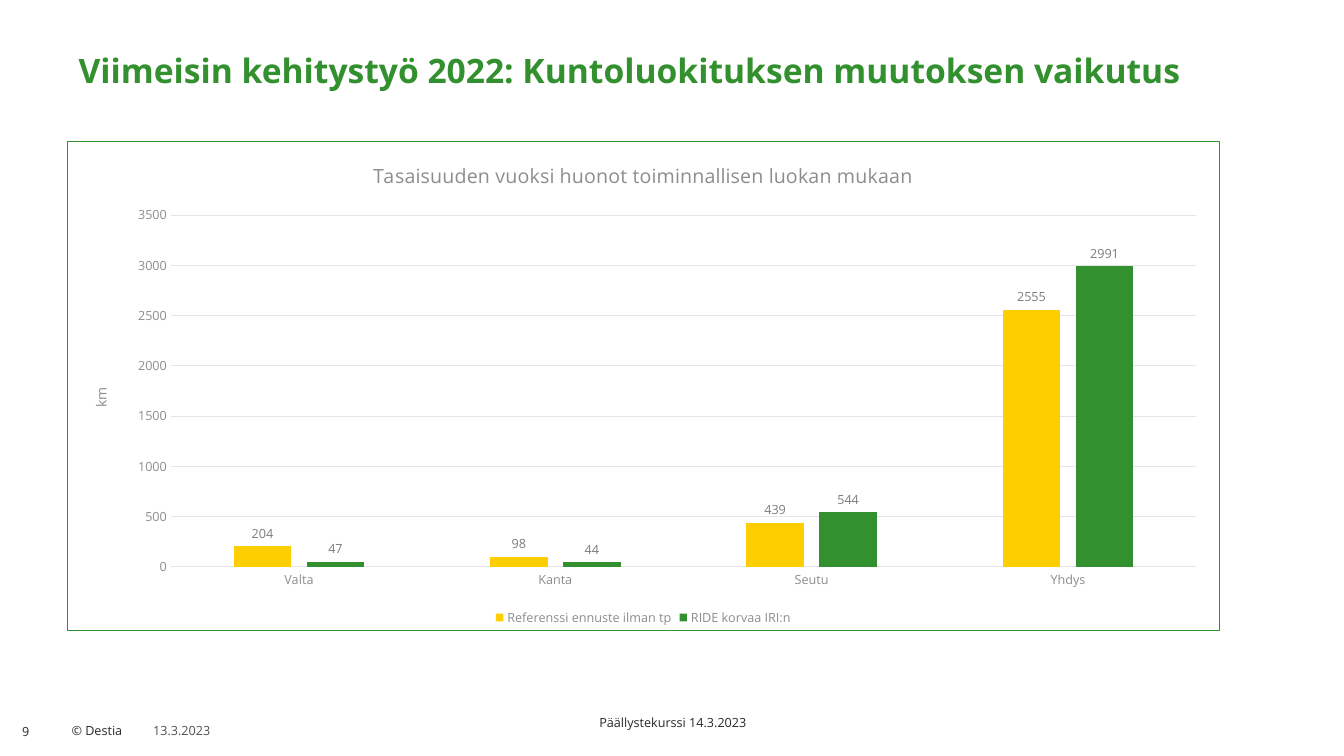
import pptx
import pptx.chart.data
import pptx.dml.color
import pptx.enum.chart
import pptx.enum.text
import pptx.oxml
import pptx.oxml.ns
import pptx.util
from pptx.util import Cm

ALIGN = pptx.enum.text.PP_ALIGN
ANCHOR = pptx.enum.text.MSO_ANCHOR

THEME = {
    "font": "Open Sans",
    "green": "32912E", "yellow": "FFCE00", "ink": "282828", "date": "505050",
    "axis": "8D8D8D", "label": "7C7C7C", "grid": "E5E5E5",
    "title_pt": 24, "chart_title_pt": 14, "axis_title_pt": 10, "small_pt": 9,
}

# text, (left, top, width, height) in cm, size, colour, bold, alignment, anchor,
# (horizontal, vertical) inset in cm
TEXTS = [
    ("© Destia", (1.27, 18.19, 2.06, 0.41), "small_pt", "ink", False,
     ALIGN.RIGHT, ANCHOR.MIDDLE, (0.25, 0.13)),
    ("9", (0.56, 18.06, 1.4, 0.56), "small_pt", "ink", False,
     ALIGN.LEFT, ANCHOR.BOTTOM, (0, 0)),
    ("Viimeisin kehitystyö 2022: Kuntoluokituksen muutoksen vaikutus",
     (1.68, 1.32, 30.53, 1.7), "title_pt", "green", True,
     ALIGN.LEFT, ANCHOR.TOP, (0.3, 0.13)),
    ("13.3.2023", (3.61, 18.21, 7.62, 0.41), "small_pt", "date", False,
     ALIGN.LEFT, ANCHOR.MIDDLE, (0.25, 0.13)),
    ("Päällystekurssi 14.3.2023", (12.8, 18, 8.31, 0.41), "small_pt", "ink", False,
     ALIGN.CENTER, ANCHOR.MIDDLE, (0.25, 0.13)),
]

CHART_BOX = (1.68, 3.56, 29.06, 12.34)
CHART_TITLE = "Tasaisuuden vuoksi huonot toiminnallisen luokan mukaan"
AXIS_TITLE = "km"
CATEGORIES = ["Valta", "Kanta", "Seutu", "Yhdys"]
SERIES = [
    ("Referenssi ennuste ilman tp", "yellow", [204, 98, 439, 2555]),
    ("RIDE korvaa IRI:n", "green", [47, 44, 544, 2991]),
]
PLOT_AREA = {"x": 0.09, "y": 0.15, "w": 0.89, "h": 0.72}


def rgb(name):
    return pptx.dml.color.RGBColor.from_string(THEME[name])


def style(font, size, colour, bold=False):
    font.name = THEME["font"]
    font.size = pptx.util.Pt(THEME[size])
    font.bold = bold
    font.color.rgb = rgb(colour)


def add_text(s, text, box, size, colour, bold, align, anchor, inset):
    tf = s.shapes.add_textbox(*map(Cm, box)).text_frame
    tf.word_wrap = True
    tf.vertical_anchor = anchor
    tf.margin_left = tf.margin_right = Cm(inset[0])
    tf.margin_top = tf.margin_bottom = Cm(inset[1])
    tf.text = text
    p = tf.paragraphs[0]
    p.alignment = align
    if size == "title_pt":
        p.line_spacing = 0.8
    style(p.runs[0].font, size, colour, bold)


def set_title(owner, text, size):
    """Title a chart or an axis."""
    tf = (owner.chart_title if hasattr(owner, "chart_title") else owner.axis_title).text_frame
    tf.text = text
    style(tf.paragraphs[0].runs[0].font, size, "axis")


def set_line(line, colour):
    line.color.rgb = rgb(colour)
    line.width = pptx.util.Pt(0.75)


def frame_chart(chart):
    """Draw the border round the chart and fix the inner plot area."""
    ns = pptx.oxml.ns.nsdecls("c", "a")
    border = pptx.oxml.parse_xml(
        f'<c:spPr {ns}><a:noFill/><a:ln w="9525"><a:solidFill>'
        f'<a:srgbClr val="{THEME["green"]}"/></a:solidFill></a:ln></c:spPr>')
    body = chart.element.find(pptx.oxml.ns.qn("c:chart"))
    body.addnext(border)
    modes = '<c:xMode val="edge"/><c:yMode val="edge"/>'
    sizes = "".join(f'<c:{k} val="{v}"/>' for k, v in PLOT_AREA.items())
    layout = pptx.oxml.parse_xml(
        f'<c:layout {ns}><c:manualLayout><c:layoutTarget val="inner"/>'
        f'{modes}{sizes}</c:manualLayout></c:layout>')
    area = body.find(pptx.oxml.ns.qn("c:plotArea"))
    for old in area.findall(pptx.oxml.ns.qn("c:layout")):
        area.remove(old)
    area.insert(0, layout)


def add_condition_chart(s):
    data = pptx.chart.data.CategoryChartData(number_format="0")
    data.categories = CATEGORIES
    for name, _, values in SERIES:
        data.add_series(name, values)
    chart = s.shapes.add_chart(pptx.enum.chart.XL_CHART_TYPE.COLUMN_CLUSTERED,
                               *map(Cm, CHART_BOX), data).chart
    style(chart.font, "axis_title_pt", "date")
    set_title(chart, CHART_TITLE, "chart_title_pt")

    chart.has_legend = True
    chart.legend.position = pptx.enum.chart.XL_LEGEND_POSITION.BOTTOM
    chart.legend.include_in_layout = False
    style(chart.legend.font, "small_pt", "axis")

    cat, val = chart.category_axis, chart.value_axis
    for axis in (cat, val):
        axis.major_tick_mark = axis.minor_tick_mark = pptx.enum.chart.XL_TICK_MARK.NONE
        style(axis.tick_labels.font, "small_pt", "axis")
    set_line(cat.format.line, "grid")
    set_line(val.major_gridlines.format.line, "grid")
    val.format.line.fill.background()
    val.minimum_scale, val.maximum_scale, val.major_unit = 0, 3500, 500
    val.tick_labels.number_format = "0"
    val.tick_labels.number_format_is_linked = False
    set_title(val, AXIS_TITLE, "axis_title_pt")

    plot = chart.plots[0]
    plot.gap_width, plot.overlap, plot.vary_by_categories = 219, -27, False
    for series, (_, colour, _) in zip(plot.series, SERIES):
        series.format.fill.solid()
        series.format.fill.fore_color.rgb = rgb(colour)
        labels = series.data_labels
        labels.show_value = True
        labels.position = pptx.enum.chart.XL_LABEL_POSITION.OUTSIDE_END
        labels.number_format = "0"
        labels.number_format_is_linked = False
        style(labels.font, "small_pt", "label")
    frame_chart(chart)


def main():
    prs = pptx.Presentation()
    prs.slide_width, prs.slide_height = Cm(33.87), Cm(19.05)
    s = prs.slides.add_slide(prs.slide_layouts[6])
    for item in TEXTS:
        add_text(s, *item)
    add_condition_chart(s)
    prs.save("out.pptx")


if __name__ == "__main__":
    main()
